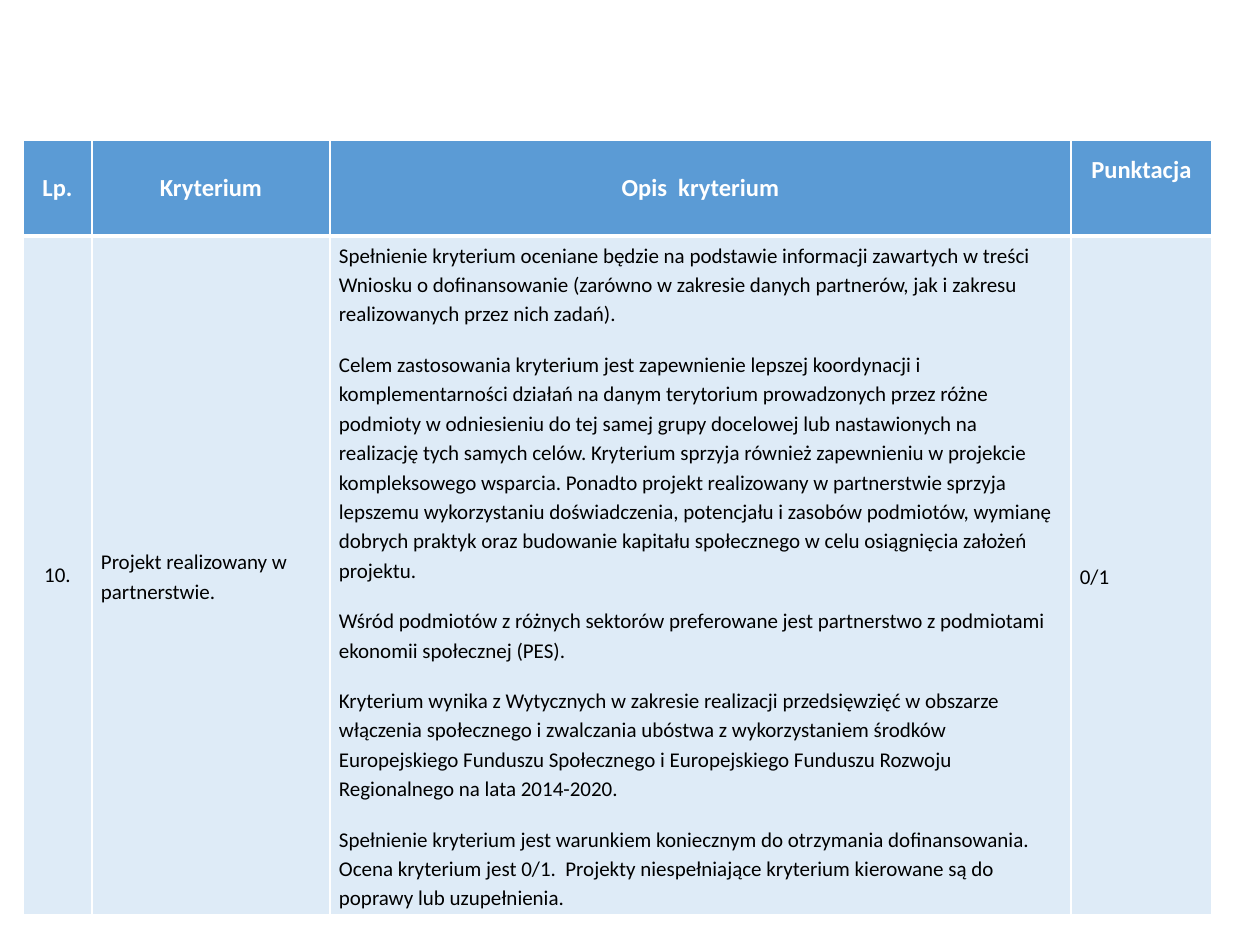
from pptx import Presentation
from pptx.dml.color import RGBColor
from pptx.enum.text import MSO_ANCHOR, PP_ALIGN
from pptx.oxml import parse_xml
from pptx.oxml.ns import nsdecls
from pptx.util import Emu, Pt

CENTER, LEFT = PP_ALIGN.CENTER, PP_ALIGN.LEFT
MIDDLE = MSO_ANCHOR.MIDDLE
BLANK_LAYOUT = 6
FONT = "Calibri"
COLORS = {"header": "5B9BD5", "body": "DEEBF7", "white": "FFFFFF", "black": "000000"}

# Content
HEADERS = ["Lp.", "Kryterium", "Opis  kryterium", "Punktacja"]
DESCRIPTION = [
    "Spełnienie kryterium oceniane będzie na podstawie informacji zawartych w treści "
    "Wniosku o dofinansowanie (zarówno w zakresie danych partnerów, jak i zakresu "
    "realizowanych przez nich zadań).",
    "Celem zastosowania kryterium jest zapewnienie lepszej koordynacji i "
    "komplementarności działań na danym terytorium prowadzonych przez różne podmioty "
    "w odniesieniu do tej samej grupy docelowej lub nastawionych na realizację tych "
    "samych celów. Kryterium sprzyja również zapewnieniu w projekcie kompleksowego "
    "wsparcia. Ponadto projekt realizowany w partnerstwie sprzyja lepszemu "
    "wykorzystaniu doświadczenia, potencjału i zasobów podmiotów, wymianę dobrych "
    "praktyk oraz budowanie kapitału społecznego w celu osiągnięcia założeń projektu.",
    "Wśród podmiotów z różnych sektorów preferowane jest partnerstwo z podmiotami "
    "ekonomii społecznej (PES).",
    "Kryterium wynika z Wytycznych w zakresie realizacji przedsięwzięć w obszarze "
    "włączenia społecznego i zwalczania ubóstwa z wykorzystaniem środków Europejskiego "
    "Funduszu Społecznego i Europejskiego Funduszu Rozwoju Regionalnego na lata "
    "2014-2020.",
    "Spełnienie kryterium jest warunkiem koniecznym do otrzymania dofinansowania. "
    "Ocena kryterium jest 0/1.  Projekty niespełniające kryterium kierowane są do "
    "poprawy lub uzupełnienia.",
]
CRITERION = [["10."], ["Projekt realizowany w partnerstwie."], DESCRIPTION, ["0/1"]]

# Layout in px
TABLE_LEFT, TABLE_TOP = 23, 140
COLUMN_WIDTHS = [69, 238, 741, 141]
ROW_HEIGHTS = [96, 679]
SIDE_MARGIN = 9
SCORE_BOTTOM_MARGIN = 36


def px(value):
    return Emu(round(value * 914400 / 126))


def write_cell(cell, paragraphs, *, size, color, fill, bold=False, align=LEFT,
               line_spacing=1.0, bottom_border=1):
    cell.fill.solid()
    cell.fill.fore_color.rgb = RGBColor.from_string(COLORS[fill])
    cell.vertical_anchor = MIDDLE
    cell.margin_left = cell.margin_right = px(SIDE_MARGIN)
    cell.margin_top = cell.margin_bottom = 0
    for index, text in enumerate(paragraphs):
        frame = cell.text_frame
        paragraph = frame.add_paragraph() if index else frame.paragraphs[0]
        paragraph.text = text
        paragraph.alignment = align
        paragraph.line_spacing = line_spacing
        paragraph.space_before = Pt(12 if index else 0)
        font = paragraph.runs[0].font
        font.name, font.size, font.bold = FONT, Pt(size), bold
        font.color.rgb = RGBColor.from_string(COLORS[color])
    # Borders precede the fill in the cell properties
    properties = cell._tc.get_or_add_tcPr()
    widths = {"lnL": 1, "lnR": 1, "lnT": 1, "lnB": bottom_border}
    for position, (side, width) in enumerate(widths.items()):
        properties.insert(position, parse_xml(
            f'<a:{side} {nsdecls("a")} w="{Pt(width)}"><a:solidFill>'
            f'<a:srgbClr val="{COLORS["white"]}"/></a:solidFill></a:{side}>'))


def main():
    presentation = Presentation()
    presentation.slide_width, presentation.slide_height = px(1260), px(945)
    slide = presentation.slides.add_slide(presentation.slide_layouts[BLANK_LAYOUT])

    # Table grid
    table = slide.shapes.add_table(
        len(ROW_HEIGHTS), len(COLUMN_WIDTHS), px(TABLE_LEFT), px(TABLE_TOP),
        px(sum(COLUMN_WIDTHS)), px(sum(ROW_HEIGHTS))).table
    for column, width in zip(table.columns, COLUMN_WIDTHS):
        column.width = px(width)
    for row, height in zip(table.rows, ROW_HEIGHTS):
        row.height = px(height)

    # Header row and criterion row
    for index, (header, paragraphs) in enumerate(zip(HEADERS, CRITERION)):
        write_cell(table.cell(0, index), [header], size=14, color="white",
                   fill="header", bold=True, align=CENTER, bottom_border=3)
        is_number = index == 0
        write_cell(table.cell(1, index), paragraphs, size=12, color="black",
                   fill="body", align=CENTER if is_number else LEFT,
                   line_spacing=1.0 if is_number else 1.15)
    # The score heading sits above the middle of its cell
    table.cell(0, len(HEADERS) - 1).margin_bottom = px(SCORE_BOTTOM_MARGIN)

    presentation.save("out.pptx")


if __name__ == "__main__":
    main()
